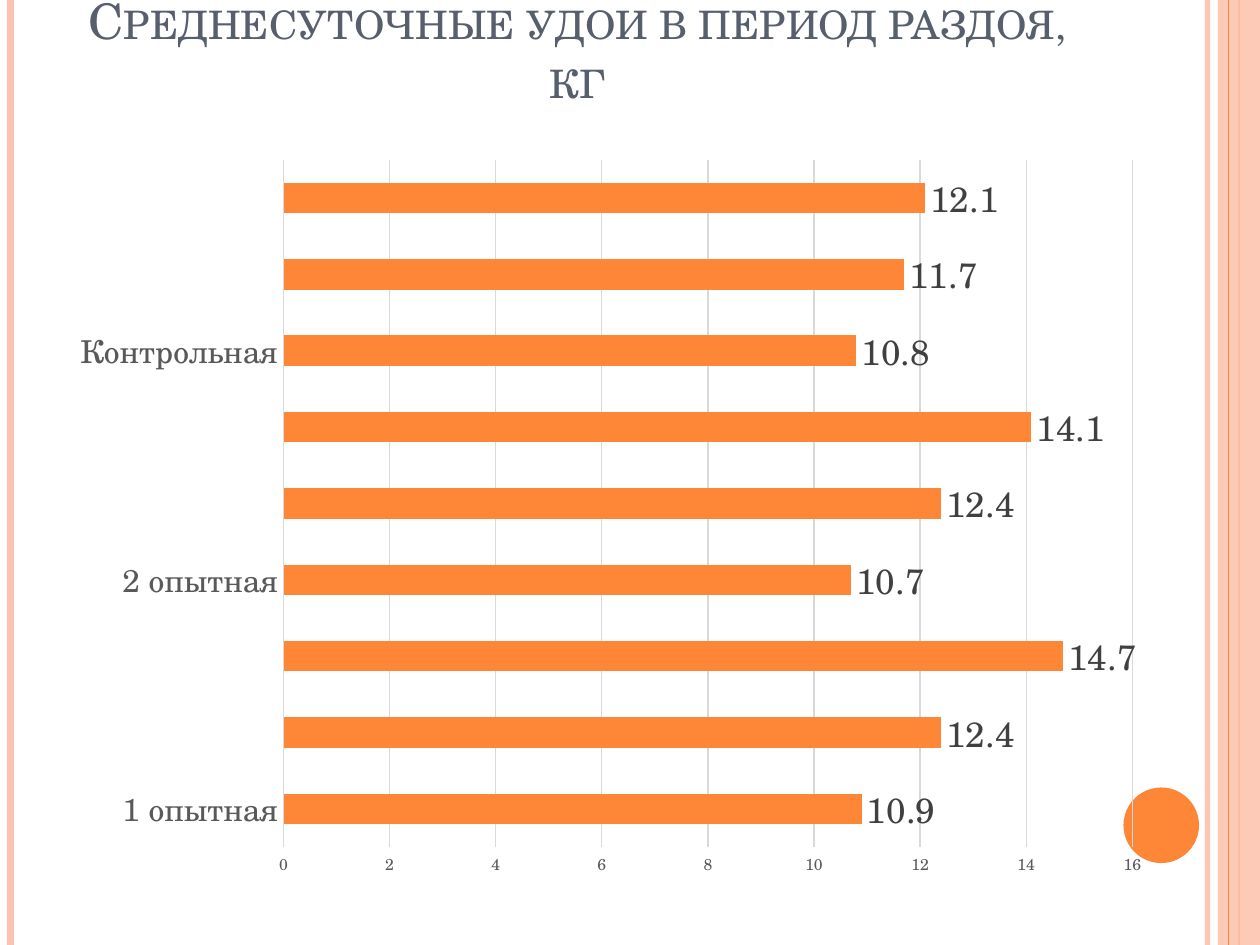
from lxml import etree
from pptx import Presentation
from pptx import util as u
from pptx.chart import data
from pptx.dml.color import RGBColor
from pptx.enum import chart as ce, shapes, text
from pptx.oxml.ns import qn

HUES = {
    "peach": "FEC3AE", "orange": "FE8637", "slate": "575F6D",
    "gray": "595959", "dark": "404040", "grid": "D9D9D9", "black": "000000",
}
CATS = ["1 опытная", "", "", "2 опытная", "", "", "Контрольная", "", ""]
YIELDS = [10.9, 12.4, 14.7, 10.7, 12.4, 14.1, 10.8, 11.7, 12.1]
RULES = [
    (690, "peach", 3, 93), (6, "peach", 4.5, 100), (708, "orange", 1.5, 100),
]


class Deck:
    font = "TeX Gyre Schola"

    def __init__(self, wide, high):
        self.prs = Presentation()
        self.prs.slide_width = u.Pt(wide)
        self.prs.slide_height = u.Pt(high)
        self.high = high
        self.slide = self.prs.slides.add_slide(self.prs.slide_layouts[5])

    def hue(self, name):
        return RGBColor.from_string(HUES[name])

    def fade(self, part, rate):
        if rate < 100:
            tone = next(part.iter(qn("a:srgbClr")))
            etree.SubElement(tone, qn("a:alpha")).set("val", str(rate * 1000))

    def style(self, font, size, name):
        font.name = self.font
        font.size = u.Pt(size)
        font.bold = False
        font.color.rgb = self.hue(name)

    def rule(self, left, name, width, rate=100):
        line = self.slide.shapes.add_connector(
            shapes.MSO_CONNECTOR.STRAIGHT, u.Pt(left), 0, u.Pt(left), u.Pt(self.high))
        line.line.color.rgb = self.hue(name)
        line.line.width = u.Pt(width)
        props = line.element.spPr
        self.fade(props, rate)
        etree.SubElement(props, qn("a:effectLst"))

    def shape(self, kind, box, name, rate=100):
        item = self.slide.shapes.add_shape(kind, *map(u.Pt, box))
        item.shadow.inherit = False
        item.fill.solid()
        item.fill.fore_color.rgb = self.hue(name)
        item.line.fill.background()
        self.fade(item.element.spPr, rate)

    def title(self, words, box, size, name):
        item = self.slide.shapes.title
        item.left, item.top, item.width, item.height = map(u.Pt, box)
        frame = item.text_frame
        frame.word_wrap = True
        frame.auto_size = text.MSO_AUTO_SIZE.NONE
        frame.vertical_anchor = text.MSO_ANCHOR.BOTTOM
        para = frame.paragraphs[0]
        para.alignment = text.PP_ALIGN.CENTER
        run = para.add_run()
        run.text = words
        self.style(run.font, size, name)
        run.font.element.set("cap", "small") if hasattr(run.font, "element") else \
            next(para.runs[0].font._element.iter()).set("cap", "small")

    def axis(self, axis, size):
        axis.major_tick_mark = axis.minor_tick_mark = ce.XL_TICK_MARK.NONE
        axis.format.line.fill.background()
        self.style(axis.tick_labels.font, size, "gray")

    def place(self, chart, spots):
        area = next(chart.element.iter(qn("c:plotArea")))
        for old in area.findall(qn("c:layout")):
            area.remove(old)
        outer = etree.Element(qn("c:layout"))
        area.insert(0, outer)
        inner = etree.SubElement(outer, qn("c:manualLayout"))
        pairs = [("layoutTarget", "inner"), ("xMode", "edge"), ("yMode", "edge")]
        for tag, val in pairs + list(zip("xywh", spots)):
            etree.SubElement(inner, qn("c:" + tag)).set("val", str(val))

    def bars(self, cats, vals, box, spots):
        table = data.CategoryChartData(number_format="General")
        table.categories = cats
        table.add_series("Series 1", vals)
        chart = self.slide.shapes.add_chart(
            ce.XL_CHART_TYPE.BAR_CLUSTERED, *map(u.Pt, box), table).chart
        chart.has_legend = chart.has_title = False
        self.style(chart.font, 10, "black")
        self.axis(chart.category_axis, 18)
        scale = chart.value_axis
        self.axis(scale, 9)
        scale.minimum_scale, scale.maximum_scale, scale.major_unit = 0, 16, 2
        scale.has_major_gridlines = True
        grid = scale.major_gridlines.format.line
        grid.color.rgb = self.hue("grid")
        grid.width = u.Pt(0.75)
        plot = chart.plots[0]
        plot.gap_width = 150
        plot.vary_by_categories = False
        fill = plot.series[0].format.fill
        fill.solid()
        fill.fore_color.rgb = self.hue("orange")
        plot.has_data_labels = True
        labels = plot.data_labels
        labels.show_value = True
        labels.position = ce.XL_LABEL_POSITION.OUTSIDE_END
        self.style(labels.font, 20, "dark")
        self.place(chart, spots)


def main():
    deck = Deck(720, 540)
    for args in RULES:
        deck.rule(*args)
    deck.shape(shapes.MSO_SHAPE.RECTANGLE, (696, 0, 24, 540), "peach", 87)
    deck.rule(702, "orange", 0.75)
    deck.shape(shapes.MSO_SHAPE.OVAL, (642, 450, 43.2, 43.2), "orange")
    deck.title("Среднесуточные удои в период раздоя, кг",
               (36, 21.6, 588, 44), 28, "slate")
    deck.bars(CATS, YIELDS, (36, 82.8, 630, 427), (0.2, 0.02, 0.77, 0.92))
    deck.prs.save("out.pptx")


if __name__ == "__main__":
    main()
